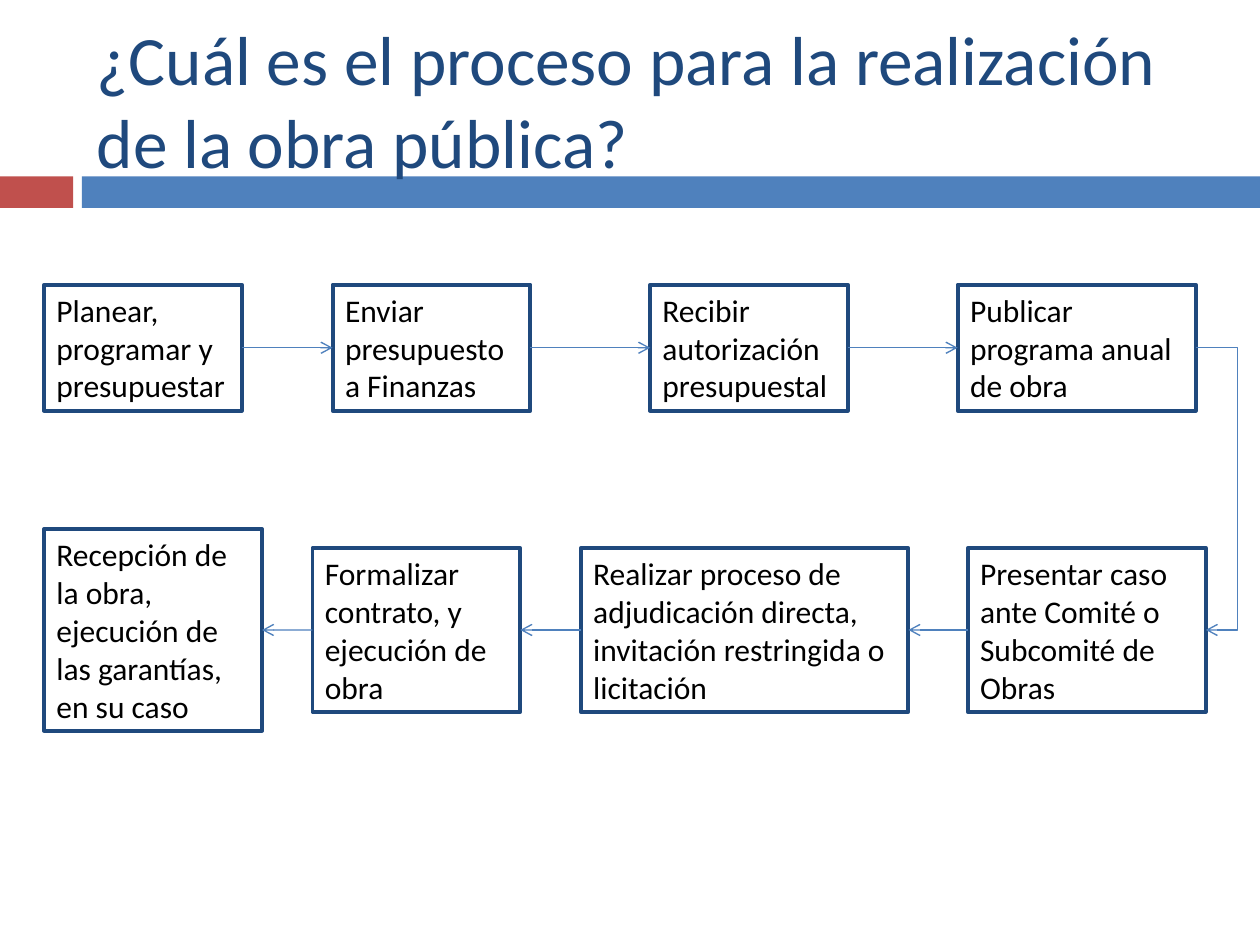
from lxml import etree
from pptx import Presentation
from pptx.dml.color import RGBColor
from pptx.enum.shapes import MSO_CONNECTOR, MSO_SHAPE
from pptx.enum.text import MSO_ANCHOR, MSO_AUTO_SIZE, PP_ALIGN
from pptx.oxml.ns import qn
from pptx.util import Inches, Pt

RECT = MSO_SHAPE.RECTANGLE
LINE, ELBOW = MSO_CONNECTOR.STRAIGHT, MSO_CONNECTOR.ELBOW
TOP, MID = MSO_ANCHOR.TOP, MSO_ANCHOR.MIDDLE
LEFT = PP_ALIGN.LEFT
GROW, FIXED = MSO_AUTO_SIZE.SHAPE_TO_FIT_TEXT, MSO_AUTO_SIZE.NONE
WEST, EAST = 1, 3

# Content: each step is (text, left, width, lines of text)
TITLE = "¿Cuál es el proceso para la realización de la obra pública?"
PLAN = [
    ("Planear, programar y presupuestar", 0.35, 1.57, 3),
    ("Enviar presupuesto a Finanzas", 2.64, 1.57, 3),
    ("Recibir autorización presupuestal", 5.16, 1.57, 3),
    ("Publicar programa anual de obra", 7.6, 1.89, 3),
]
BUILD = [
    ("Presentar caso ante Comité o Subcomité de Obras", 7.68, 1.89, 4),
    ("Realizar proceso de adjudicación directa, invitación restringida o "
     "licitación", 4.61, 2.6, 4),
    ("Formalizar contrato, y ejecución de obra", 2.48, 1.65, 4),
    ("Recepción de la obra, ejecución de las garantías, en su caso",
     0.35, 1.73, 5),
]
ROWS = [(PLAN, 2.76), (BUILD, 5.0)]  # steps and centre height

THEME = {
    "font": "Calibri", "title": 39.6, "body": 18,
    "navy": "1F497D", "blue": "4F81BD", "red": "C0504D", "ink": "000000",
    "edge": 2.25, "link": 0.79,
}
WIDE, HIGH = 10, 7.5
BAND_TOP, BAND_HIGH, BAND_CUT, BAND_GAP = 1.4, 0.25, 0.58, 0.07
PAD, LEAD = 0.1, 0.3  # box height = padding + lines * leading
TURN = 9.82           # where the bent arrow goes down


def color(name):
    return RGBColor.from_string(THEME[name])


def write(shape, text, size="body", tint="ink", anchor=TOP, fit=GROW):
    frame = shape.text_frame
    frame.word_wrap = True
    frame.auto_size = fit
    frame.vertical_anchor = anchor
    para = frame.paragraphs[0]
    para.alignment = LEFT
    run = para.add_run()
    run.text = text
    run.font.name = THEME["font"]
    run.font.size = Pt(THEME[size])
    run.font.color.rgb = color(tint)


def block(slide, left, top, width, height, fill=None, edge=None):
    shape = slide.shapes.add_shape(
        RECT, *(Inches(n) for n in (left, top, width, height)))
    shape.shadow.inherit = False
    if fill:
        shape.fill.solid()
        shape.fill.fore_color.rgb = color(fill)
    else:
        shape.fill.background()
    if edge:
        shape.line.color.rgb = color(edge)
        shape.line.width = Pt(THEME["edge"])
    else:
        shape.line.fill.background()
    return shape


def arrow(slide, start, end, sides, kind=LINE):
    link = slide.shapes.add_connector(kind, 0, 0, 0, 0)
    link.begin_connect(start, sides[0])
    link.end_connect(end, sides[1])
    link.line.color.rgb = color("blue")
    link.line.width = Pt(THEME["link"])
    props = link._element.spPr
    etree.SubElement(props.find(qn("a:ln")), qn("a:tailEnd"), type="arrow")
    etree.SubElement(props, qn("a:effectLst"))
    return link


def bend(link, turn):
    """Move the vertical leg of an elbow to the given distance."""
    share = (Inches(turn) - link.begin_x) / (link.end_x - link.begin_x)
    geom = link._element.spPr.find(qn("a:prstGeom"))
    guides = geom.find(qn("a:avLst"))
    if guides is None:
        guides = etree.SubElement(geom, qn("a:avLst"))
    etree.SubElement(guides, qn("a:gd"), name="adj1",
                     fmla=f"val {round(share * 100000)}")


def main():
    deck = Presentation()
    deck.slide_width, deck.slide_height = Inches(WIDE), Inches(HIGH)
    slide = deck.slides.add_slide(deck.slide_layouts[6])

    # Band and title
    start = BAND_CUT + BAND_GAP
    block(slide, 0, BAND_TOP, BAND_CUT, BAND_HIGH, fill="red")
    block(slide, start, BAND_TOP, WIDE - start, BAND_HIGH, fill="blue")
    head = slide.shapes.add_textbox(
        Inches(0.67), Inches(0.25), Inches(8.92), Inches(1.08))
    write(head, TITLE, size="title", tint="navy", anchor=MID, fit=FIXED)

    # Steps, centred on their row
    rows = []
    for steps, center in ROWS:
        boxes = []
        for text, left, width, lines in steps:
            height = PAD + lines * LEAD
            box = block(slide, left, center - height / 2, width, height,
                        edge="navy")
            write(box, text)
            boxes.append(box)
        rows.append(boxes)

    # Arrows: rightwards, down the side, then back leftwards
    for boxes, sides in zip(rows, [(EAST, WEST), (WEST, EAST)]):
        for first, then in zip(boxes, boxes[1:]):
            arrow(slide, first, then, sides)
    bend(arrow(slide, rows[0][-1], rows[1][0], (EAST, EAST), ELBOW), TURN)

    deck.save("out.pptx")


if __name__ == "__main__":
    main()
